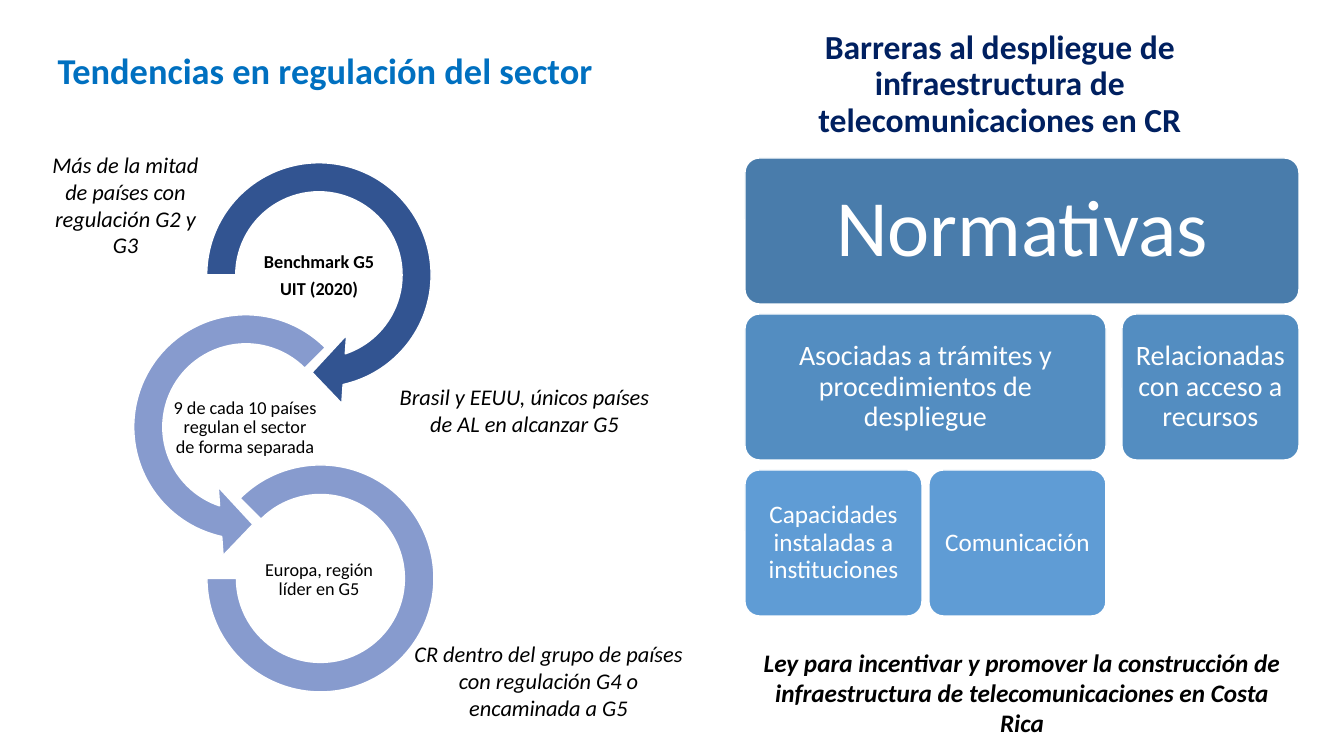
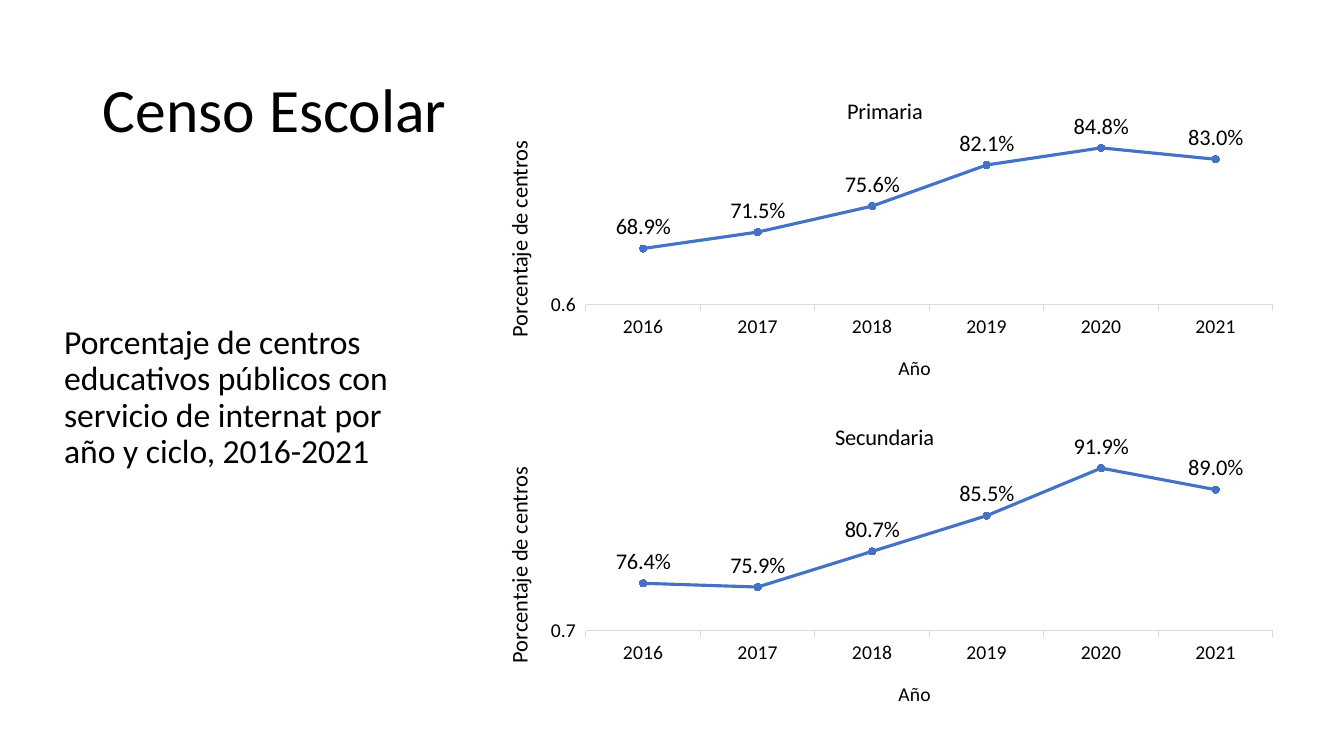
from lxml.etree import SubElement
from pptx import Presentation
from pptx.chart.data import CategoryChartData
from pptx.dml.color import RGBColor
from pptx.enum.chart import XL_CHART_TYPE, XL_LABEL_POSITION, XL_MARKER_STYLE, XL_TICK_MARK
from pptx.enum.shapes import MSO_SHAPE
from pptx.enum.text import MSO_ANCHOR, MSO_AUTO_SIZE, PP_ALIGN
from pptx.oxml.ns import qn
from pptx.util import Emu, Pt

FONT = "Calibri"
BLACK = RGBColor(0x00, 0x00, 0x00)
WHITE = RGBColor(0xFF, 0xFF, 0xFF)
TITLE_BLUE = RGBColor(0x00, 0x70, 0xC0)
NAVY = RGBColor(0x00, 0x20, 0x60)
DARK_ARC = RGBColor(0x32, 0x54, 0x91)
LIGHT_ARC = RGBColor(0x87, 0x9B, 0xCE)
ROW_COLORS = [RGBColor(0x49, 0x7C, 0xAB), RGBColor(0x53, 0x8D, 0xC1), RGBColor(0x5F, 0x9C, 0xD5)]
LINE_BLUE = RGBColor(0x44, 0x72, 0xC4)
AXIS_GRAY = RGBColor(0xD9, 0xD9, 0xD9)

SLIDE_SIZE = (1344, 756)
TREND_TITLE = "Tendencias en regulación del sector"
BARRIER_TITLE = "Barreras al despliegue de infraestructura de telecomunicaciones en CR"
ARCS = [
    (MSO_SHAPE.CIRCULAR_ARROW, (187, 143, 264, 264), (0.11, 11.42, 45, 108, 0.13), DARK_ARC),
    (MSO_SHAPE.LEFT_CIRCULAR_ARROW, (114, 295, 264, 264), (0.11, 11.42, 63, 189, 0.13), LIGHT_ARC),
    (MSO_SHAPE.BLOCK_ARC, (207, 465, 227, 227), (135, 108, 0.13), LIGHT_ARC),
]
ARC_LABELS = [
    (246, ["Benchmark G5", "UIT (2020)"], True),
    (172, ["9 de cada 10 países regulan el sector de forma separada"], False),
    (246, ["Europa, región líder en G5"], False),
]
LABEL_TOP, LABEL_STEP = 239, 152
LABEL_WIDTH, LABEL_HEIGHT = 146, 74
NOTES = [
    ((378, 378, 293, 65), "Brasil y EEUU, únicos países de AL en alcanzar G5", 16, False),
    ((402, 635, 293, 92), "CR dentro del grupo de países con regulación G4 o encaminada a G5", 16, False),
    ((35, 146, 181, 119), "Más de la mitad de países con regulación G2 y G3", 16, False),
    ((752, 642, 540, 72), "Ley para incentivar y promover la construcción de infraestructura "
                          "de telecomunicaciones en Costa Rica", 18, True),
]
COLUMN_LEFTS = [745, 929, 1122]
COLUMN_WIDTH = 177
ROW_TOP, ROW_STEP, ROW_HEIGHT = 158, 156, 146
ROW_STYLES = [(57, 24), (20, 8), (18, 7)]
BARRIERS = [
    (0, 0, 2, "Normativas"),
    (1, 0, 1, "Asociadas a trámites y procedimientos de despliegue"),
    (1, 2, 2, "Relacionadas con acceso a recursos"),
    (2, 0, 0, "Capacidades instaladas a instituciones"),
    (2, 1, 1, "Comunicación"),
]

CENSUS_TITLE = "Censo Escolar"
CENSUS_TEXT = ("Porcentaje de centros educativos públicos con servicio de internat "
               "por año y ciclo, 2016-2021")
YEARS = ["2016", "2017", "2018", "2019", "2020", "2021"]
CHARTS = [
    ("Primaria", 367, (0.6, 0.87), (0.689, 0.715, 0.756, 0.821, 0.848, 0.83)),
    ("Secundaria", 355, (0.7, 0.93), (0.764, 0.759, 0.807, 0.855, 0.919, 0.89)),
]
CHART_LEFT, CHART_TOP, CHART_WIDTH, CHART_HEIGHT = 476, 73, 813, 326
PLOT_AREA = (110, 61, 687, 171)
TITLE_TOP = 19
YEAR_TITLE_AT = (419, 278)
VALUE_TITLE_AT = (24, 64)


def px(value):
    return Emu(round(value * 914400 / 100.8))


def write_text(shape, lines, size=16, color=BLACK, bold=False, italic=False,
               align=PP_ALIGN.CENTER, anchor=MSO_ANCHOR.MIDDLE, spacing=0.9,
               after=0, inset=None, grow=False):
    frame = shape.text_frame
    frame.word_wrap = True
    frame.auto_size = MSO_AUTO_SIZE.SHAPE_TO_FIT_TEXT if grow else MSO_AUTO_SIZE.NONE
    frame.vertical_anchor = anchor
    if inset is not None:
        frame.margin_left = frame.margin_right = px(inset)
        frame.margin_top = frame.margin_bottom = px(inset)
    for index, line in enumerate(lines):
        para = frame.add_paragraph() if index else frame.paragraphs[0]
        para.alignment = align
        para.line_spacing = spacing
        para.space_after = Pt(after)
        span = para.add_run()
        span.text = line
        format_font(span.font, size, color, bold, italic)


def format_font(font, size, color=BLACK, bold=False, italic=False):
    font.name = FONT
    font.size = Pt(size)
    font.bold = bold
    font.italic = italic
    font.color.rgb = color


def add_text(page, area, lines, **style):
    box = page.shapes.add_textbox(*map(px, area))
    write_text(box, lines, **style)


def add_title(page, area, text, **style):
    title = page.shapes.title
    title.left, title.top, title.width, title.height = map(px, area)
    write_text(title, [text], **style)


def add_figure(page, kind, area, adjustments, color):
    figure = page.shapes.add_shape(kind, *map(px, area))
    for index, value in enumerate(adjustments):
        figure.adjustments[index] = value
    figure.shadow.inherit = False
    figure.fill.solid()
    figure.fill.fore_color.rgb = color
    figure.line.color.rgb = WHITE
    figure.line.width = Pt(1)
    return figure


def place_in_chart(element, left, top, width=None, height=None):
    for old in element.findall(qn("c:layout")):
        element.remove(old)
    layout = SubElement(element, qn("c:layout"))
    text = element.find(qn("c:tx"))
    element.insert(0 if text is None else element.index(text) + 1, layout)
    manual = SubElement(layout, qn("c:manualLayout"))
    settings = [("xMode", "edge"), ("yMode", "edge"),
                ("x", left / CHART_WIDTH), ("y", top / CHART_HEIGHT)]
    if width:
        settings.insert(0, ("layoutTarget", "inner"))
        settings += [("w", width / CHART_WIDTH), ("h", height / CHART_HEIGHT)]
    for name, value in settings:
        SubElement(manual, qn("c:" + name)).set("val", str(value))


def title_in_chart(title, text, size, position):
    para = title.text_frame.paragraphs[0]
    span = para.add_run()
    span.text = text
    format_font(span.font, size)
    place_in_chart(title._element, *position)


def add_line_chart(page, top, name, title_left, limits, values):
    data = CategoryChartData()
    data.categories = YEARS
    data.add_series(name, values)
    area = (CHART_LEFT, top, CHART_WIDTH, CHART_HEIGHT)
    chart = page.shapes.add_chart(XL_CHART_TYPE.LINE_MARKERS_STACKED, *map(px, area), data).chart
    format_font(chart.font, 14)
    chart.has_legend = False
    chart.has_title = True
    title_in_chart(chart.chart_title, name, 16, (title_left, TITLE_TOP))

    years, shares = chart.category_axis, chart.value_axis
    for axis, text, size, position in [
        (years, "Año", 14, YEAR_TITLE_AT),
        (shares, "Porcentaje de centros", 16, VALUE_TITLE_AT),
    ]:
        axis.has_title = True
        title_in_chart(axis.axis_title, text, size, position)
        axis.major_tick_mark = XL_TICK_MARK.OUTSIDE
        format_font(axis.tick_labels.font, 14)
    properties = shares.axis_title.text_frame._txBody.bodyPr
    properties.set("rot", "-5400000")
    properties.set("vert", "horz")
    shares.minimum_scale, shares.maximum_scale = limits
    shares.major_unit = 0.5
    shares.has_major_gridlines = True
    shares.format.line.fill.background()
    for line in (years.format.line, shares.major_gridlines.format.line):
        line.color.rgb = AXIS_GRAY
        line.width = Pt(0.75)

    plot = chart.plots[0]
    plot.vary_by_categories = False
    series = plot.series[0]
    series.smooth = False
    series.format.line.color.rgb = LINE_BLUE
    series.format.line.width = Pt(2.25)
    series.marker.style = XL_MARKER_STYLE.CIRCLE
    series.marker.size = 5
    series.marker.format.fill.solid()
    series.marker.format.fill.fore_color.rgb = LINE_BLUE
    series.marker.format.line.color.rgb = LINE_BLUE
    labels = series.data_labels
    labels.show_value = True
    labels.position = XL_LABEL_POSITION.ABOVE
    labels.number_format = "0.0%"
    labels.number_format_is_linked = False
    format_font(labels.font, 16)
    place_in_chart(chart._chartSpace.find(".//" + qn("c:plotArea")), *PLOT_AREA)


def build_regulation(page):
    add_title(page, (35, 0, 581, 146), TREND_TITLE, size=26, color=TITLE_BLUE, bold=True)
    for arc in ARCS:
        add_figure(page, *arc)
    for index, (left, lines, bold) in enumerate(ARC_LABELS):
        area = (left, LABEL_TOP + index * LABEL_STEP, LABEL_WIDTH, LABEL_HEIGHT)
        add_text(page, area, lines, size=13, bold=bold, after=5, inset=1)
    for area, text, size, bold in NOTES:
        add_text(page, area, [text], size=size, bold=bold, italic=True,
                 anchor=MSO_ANCHOR.TOP, spacing=1.0, grow=True)
    add_text(page, (738, 12, 524, 146), [BARRIER_TITLE], size=24, color=NAVY, bold=True)
    for row, first, last, text in BARRIERS:
        left = COLUMN_LEFTS[first]
        width = COLUMN_LEFTS[last] + COLUMN_WIDTH - left
        area = (left, ROW_TOP + row * ROW_STEP, width, ROW_HEIGHT)
        card = add_figure(page, MSO_SHAPE.ROUNDED_RECTANGLE, area, (0.1,), ROW_COLORS[row])
        size, inset = ROW_STYLES[row]
        write_text(card, [text], size=size, color=WHITE, inset=inset)


def build_census(page):
    add_title(page, (54, 325, 362, 146), CENSUS_TEXT, size=24, align=PP_ALIGN.LEFT)
    add_text(page, (93, 40, 1159, 146), [CENSUS_TITLE], size=44, align=PP_ALIGN.LEFT)
    for index, content in enumerate(CHARTS):
        add_line_chart(page, CHART_TOP + index * CHART_HEIGHT, *content)


def main():
    deck = Presentation()
    deck.slide_width, deck.slide_height = map(px, SLIDE_SIZE)
    for build in (build_regulation, build_census):
        build(deck.slides.add_slide(deck.slide_layouts[5]))
    deck.save("out.pptx")


if __name__ == "__main__":
    main()
